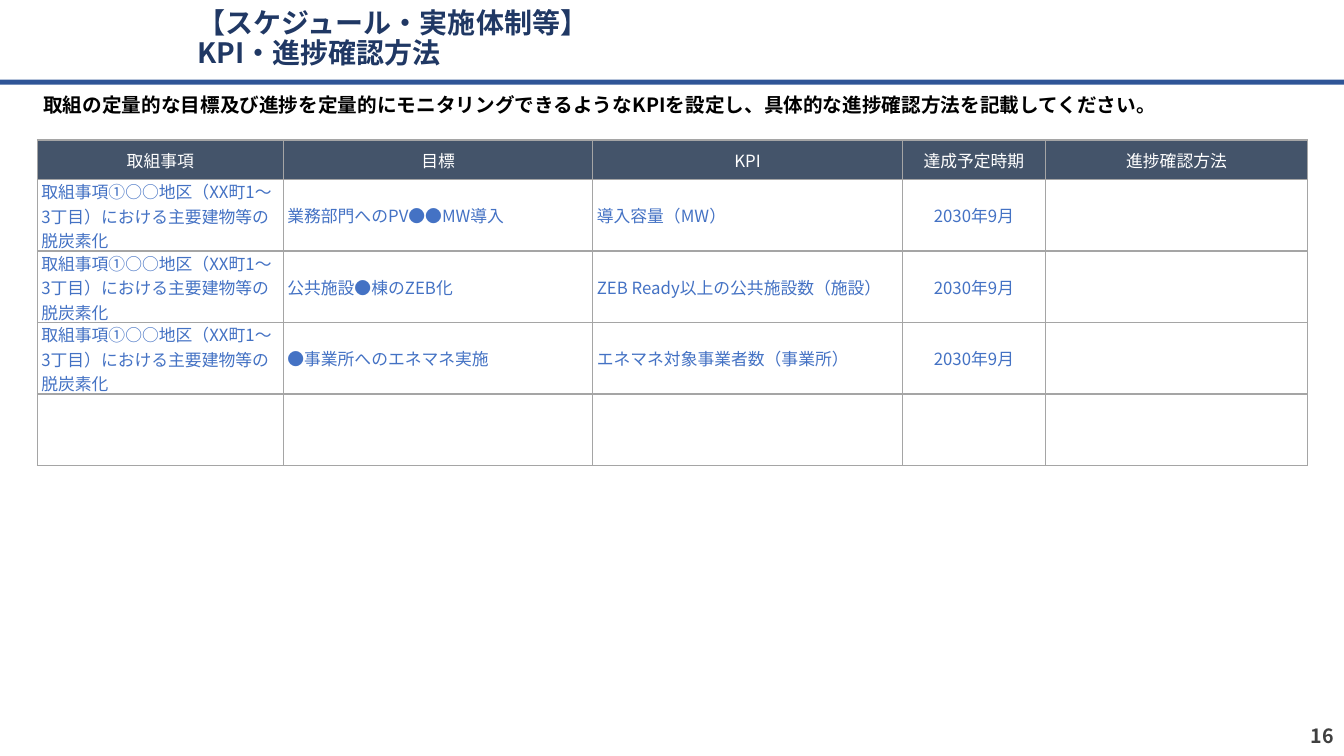
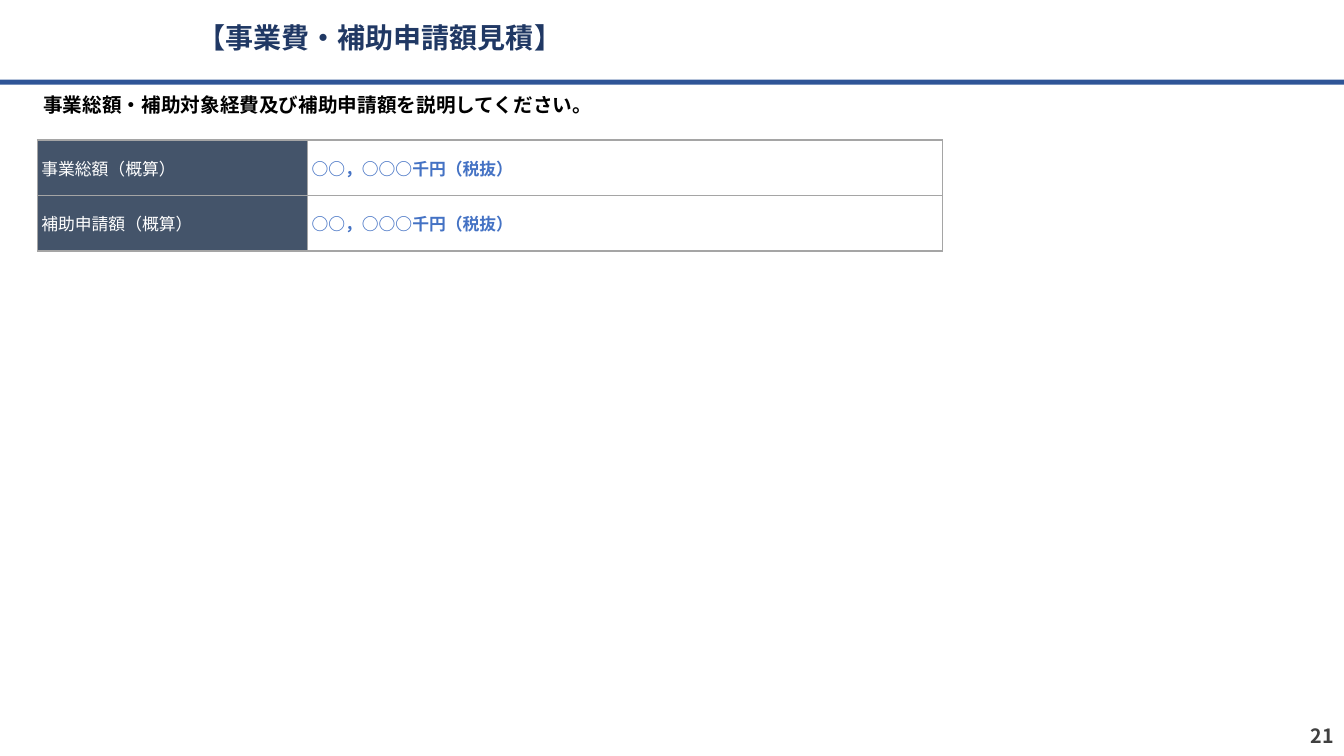
from dataclasses import dataclass

from lxml import etree
from pptx import Presentation
from pptx import util as u
from pptx.dml.color import RGBColor
from pptx.enum import lang, shapes, text
from pptx.oxml import ns


@dataclass(frozen=True)
class Theme:
    """Colours, type sizes and spacing shared by the slides."""
    font: str = "Noto Sans CJK JP"
    title: str = "203864"
    band: str = "2F5597"
    lead: str = "000000"
    number: str = "404040"
    header: str = "44546A"
    header_text: str = "FFFFFF"
    entry: str = "4472C4"
    border: str = "A5A5A5"
    title_size: int = 20
    lead_size: int = 14
    table_size: int = 12
    border_width: int = 1
    inset: float = 0.04


@dataclass(frozen=True)
class Box:
    """A rectangle that can be divided by percentages."""
    left: int
    top: int
    width: int
    height: int

    def share(self, x, y, width, height):
        """Return the inner box at the given percentages of this one."""
        return Box(self.left + round(self.width * x / 100),
                   self.top + round(self.height * y / 100),
                   round(self.width * width / 100),
                   round(self.height * height / 100))

    def place(self):
        """Return the four lengths in the order python-pptx takes them."""
        return self.left, self.top, self.width, self.height


THEME = Theme()
CENTER, RIGHT = text.PP_ALIGN.CENTER, text.PP_ALIGN.RIGHT
MIDDLE = text.MSO_ANCHOR.MIDDLE
TIGHT = {"margin_left": u.Inches(THEME.inset), "margin_right": u.Inches(THEME.inset),
         "margin_top": 0, "margin_bottom": 0}


def apply(target, values):
    """Set each named attribute of the target."""
    for name, value in values.items():
        setattr(target, name, value)


def write(frame, content, size, color, bold=False, **paragraph_format):
    """Write one paragraph, with line breaks where the content has them."""
    paragraph = frame.paragraphs[0]
    apply(paragraph, paragraph_format)
    for index, line in enumerate(content.split("\n")):
        if index:
            paragraph.add_line_break()
        run = paragraph.add_run()
        run.text = line
        apply(run.font, {"size": u.Pt(size), "bold": bold, "name": THEME.font,
                         "language_id": lang.MSO_LANGUAGE_ID.JAPANESE})
        run.font.color.rgb = RGBColor.from_string(color)
        latin = run.font._element.find(ns.qn("a:latin"))
        latin.addnext(latin.makeelement(ns.qn("a:ea"), {"typeface": THEME.font}))


def add_label(slide, box, content, size, color, **paragraph_format):
    """Add a bold, vertically centred line of text."""
    frame = slide.shapes.add_textbox(*box.place()).text_frame
    apply(frame, {"word_wrap": True, "vertical_anchor": MIDDLE})
    write(frame, content, size, color, True, **paragraph_format)


def add_frame(slide, box, title, number):
    """Add the title, the band below it and the page number."""
    band = slide.shapes.add_shape(shapes.MSO_SHAPE.RECTANGLE,
                                  *box.share(0, 10.53, 100, 0.67).place())
    band.shadow.inherit = False
    band.fill.solid()
    band.fill.fore_color.rgb = RGBColor.from_string(THEME.band)
    band.line.fill.background()
    add_label(slide, box.share(13.95, 0, 79.14, 10.53), title,
              THEME.title_size, THEME.title, line_spacing=0.9)
    add_label(slide, box.share(77.5, 94.67, 22.5, 5.33), number,
              THEME.lead_size, THEME.number, alignment=RIGHT)


def add_lead(slide, box, content):
    """Add the instruction below the band."""
    lead = slide.shapes.add_shape(shapes.MSO_SHAPE.ROUNDED_RECTANGLE, *box.place())
    lead.shadow.inherit = False
    lead.fill.background()
    lead.line.fill.background()
    apply(lead.text_frame, {"word_wrap": True, "vertical_anchor": MIDDLE, **TIGHT})
    write(lead.text_frame, content, THEME.lead_size, THEME.lead, True,
          alignment=text.PP_ALIGN.LEFT)


def add_borders(cell):
    """Draw a thin line on all four sides of a cell."""
    properties = cell._tc.get_or_add_tcPr()
    for side in ("lnL", "lnR", "lnT", "lnB"):
        line = etree.SubElement(properties, ns.qn(f"a:{side}"),
                                w=str(u.Pt(THEME.border_width)))
        fill = etree.SubElement(line, ns.qn("a:solidFill"))
        etree.SubElement(fill, ns.qn("a:srgbClr"), val=THEME.border)


def fill_cell(cell, content, header, bold, alignment):
    """Format one table cell and write its content."""
    add_borders(cell)
    apply(cell, {"vertical_anchor": MIDDLE, **TIGHT})
    if header:
        cell.fill.solid()
        cell.fill.fore_color.rgb = RGBColor.from_string(THEME.header)
    else:
        cell.fill.background()
    if content:
        write(cell.text_frame, content, THEME.table_size,
              THEME.header_text if header else THEME.entry, bold, alignment=alignment)


def add_grid(slide, box, rows, column_weights, row_weights, is_header,
             is_centered=lambda row, column: False, bold_entries=False):
    """Add a table whose columns and rows share the box by weight."""
    table = slide.shapes.add_table(len(rows), len(column_weights), *box.place()).table
    apply(table, {"first_row": False, "horz_banding": False})
    for column, weight in zip(table.columns, column_weights):
        column.width = round(box.width * weight / sum(column_weights))
    for row, weight in zip(table.rows, row_weights):
        row.height = round(box.height * weight / sum(row_weights))
    for r, contents in enumerate(rows):
        for c, content in enumerate(contents):
            header = is_header(r, c)
            fill_cell(table.cell(r, c), content, header, bold_entries and not header,
                      CENTER if is_centered(r, c) else None)


def kpi_slide(slide, box):
    """Build the slide on indicators and progress checks."""
    add_frame(slide, box, "【スケジュール・実施体制等】\nKPI・進捗確認方法", "16")
    add_lead(slide, box.share(2.78, 11.2, 94.52, 5.2),
             "取組の定量的な目標及び進捗を定量的にモニタリングできるようなKPIを設定し、"
             "具体的な進捗確認方法を記載してください。")
    initiative = "取組事項①○○地区（XX町1～3丁目）における主要建物等の脱炭素化"
    targets = [("業務部門へのPV●●MW導入", "導入容量（MW）"),
               ("公共施設●棟のZEB化", "ZEB Ready以上の公共施設数（施設）"),
               ("●事業所へのエネマネ実施", "エネマネ対象事業者数（事業所）")]
    rows = [("取組事項", "目標", "KPI", "達成予定時期", "進捗確認方法"),
            *((initiative, goal, kpi, "2030年9月", "") for goal, kpi in targets),
            ("",) * 5]
    add_grid(slide, box.share(2.78, 18.53, 94.52, 43.07), rows,
             (2.44, 3.07, 3.07, 1.42, 2.6), (0.39, *(0.71,) * 4),
             is_header=lambda row, column: row == 0,
             is_centered=lambda row, column: row == 0 or column == 3)


def cost_slide(slide, box):
    """Build the slide on project cost and the subsidy applied for."""
    add_frame(slide, box, "【事業費・補助申請額見積】", "21")
    add_lead(slide, box.share(2.78, 11.2, 94.52, 5.2),
             "事業総額・補助対象経費及び補助申請額を説明してください。")
    rows = [(item, "○○，○○○千円（税抜）")
            for item in ("事業総額（概算）", "補助申請額（概算）")]
    add_grid(slide, box.share(2.78, 18.53, 67.37, 14.67), rows, (2.68, 6.3), (1, 1),
             is_header=lambda row, column: column == 0, bold_entries=True)


def main():
    """Build and save the presentation."""
    deck = Presentation()
    apply(deck, {"slide_width": u.Inches(13.33), "slide_height": u.Inches(7.5)})
    page = Box(0, 0, deck.slide_width, deck.slide_height)
    for build in (kpi_slide, cost_slide):
        build(deck.slides.add_slide(deck.slide_layouts[6]), page)
    deck.save("out.pptx")


if __name__ == "__main__":
    main()
